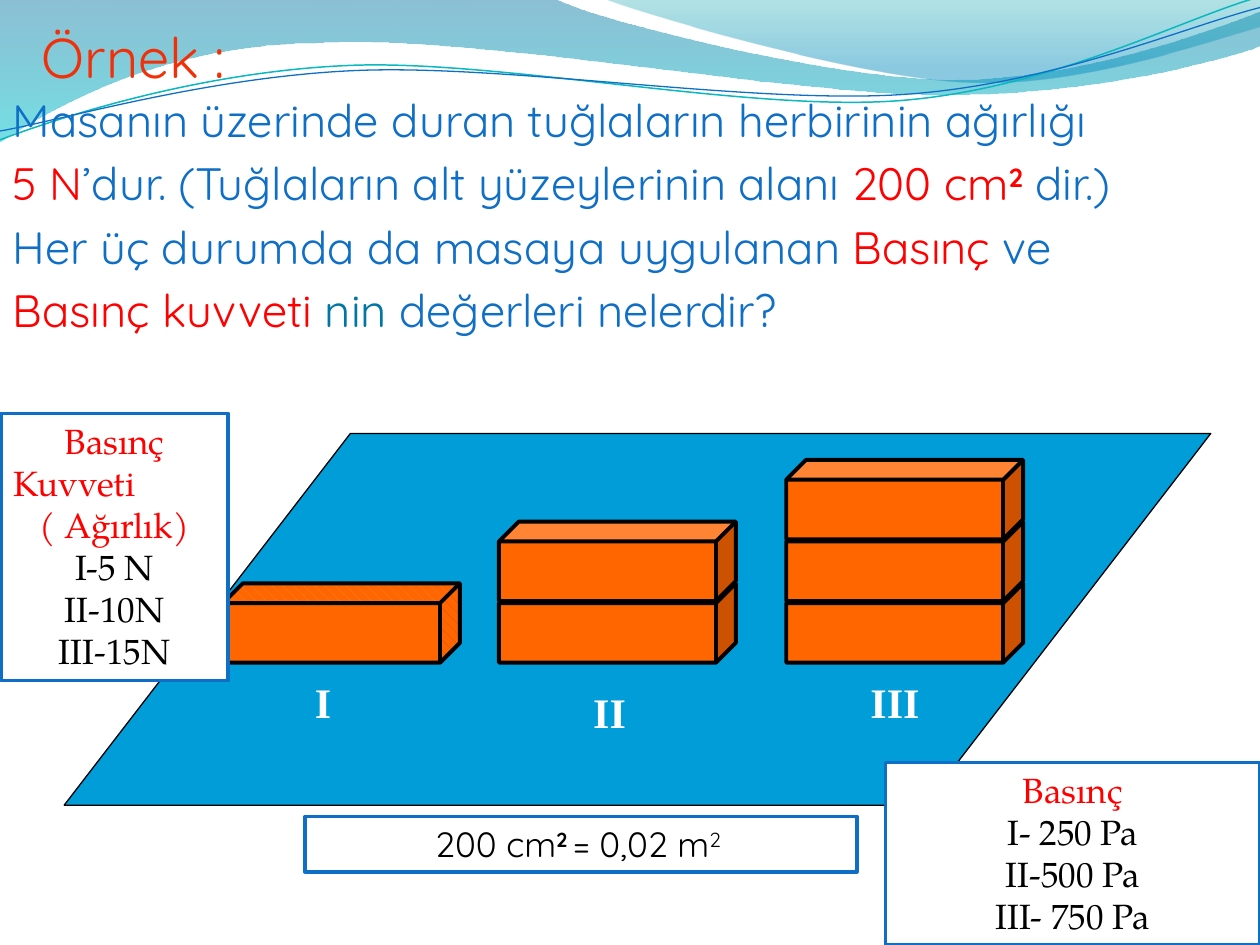
from lxml.etree import SubElement
from pptx import Presentation
from pptx.dml.color import RGBColor
from pptx.enum.dml import MSO_PATTERN
from pptx.enum.shapes import MSO_SHAPE
from pptx.enum.text import MSO_ANCHOR, MSO_AUTO_SIZE, PP_ALIGN
from pptx.oxml.ns import qn
from pptx.util import Inches, Pt

BLUE = RGBColor(0x0F, 0x6F, 0xC6)
TEAL = RGBColor(0x00, 0x76, 0xA3)
RED = RGBColor(0xFF, 0x00, 0x00)
TITLE_RED = RGBColor(0xF1, 0x30, 0x09)
TABLE_BLUE = RGBColor(0x00, 0x9D, 0xD9)
ORANGE = RGBColor(0xFF, 0x66, 0x00)
BLACK = RGBColor(0, 0, 0)
WHITE = RGBColor(0xFF, 0xFF, 0xFF)
AQUA = RGBColor(0x0A, 0xB8, 0xBF)
SANS, SERIF, ROMAN = "Quicksand", "TeX Gyre Pagella", "Times New Roman"

QUESTION = [
    [("Masanın üzerinde duran tuğlaların herbirinin ağırlığı", BLUE)],
    [("5 N", RED), ("’dur. (Tuğlaların alt yüzeylerinin alanı ", BLUE),
     ("200 cm", RED), ("2", RED, "bold super"), (" dir.)", BLUE)],
    [("Her üç durumda da masaya uygulanan ", BLUE), ("Basınç", RED), (" ve", BLUE)],
    [("Basınç kuvveti ", RED), ("nin ", TEAL), ("değerleri nelerdir?", BLUE)],
]
FORCES = [[("Basınç", RED)], [("Kuvveti", RED)], [("( Ağırlık)", RED)],
          [("I-5 N", BLACK)], [("II-10N", BLACK)], [("III-15N", BLACK)]]
PRESSURES = [[("Basınç", RED)], [("I- 250 Pa", BLACK)],
             [("II-500 Pa", BLACK)], [("III- 750 Pa", BLACK)]]
CONVERSION = [[("200 cm", BLACK), ("2 ", BLACK, "bold super"),
               ("= 0,02 m", BLACK), ("2 ", BLACK, "super")]]
BOXES = [
    ((0.01, 3.28, 1.8, 2.12), FORCES, SERIF),
    ((7.03, 6.05, 2.97, 1.45), PRESSURES, SERIF),
    ((2.42, 6.48, 4.38, 0.44), CONVERSION, SANS),
]
STACKS = [(6.24, 3), (1.77, 1), (3.96, 2)]
LABELS = [("I", 2.4, 5.32, 0.78), ("II", 4.61, 5.4, 0.78), ("III", 6.81, 5.32, 1.18)]

WAVES = [
    ([(0, -0.01), (4.4, -0.01),
      (4.76, 0.17, 6.64, 0.63, 7.58, 0.63), (8.53, 0.63, 9.58, 0.26, 10, 0.09),
      (10.01, 0.36), (9.83, 0.44, 8.7, 0.76, 7.46, 0.75),
      (6.22, 0.75, 3.82, 0.28, 2.57, 0.34), (1.29, 0.35, 0.46, 0.83, -0.01, 1.13)],
     [(0, RGBColor(0x00, 0x74, 0xA1), 45), (1, RGBColor(0x00, 0xC6, 0xCF), 55)]),
    ([(4.79, -0.01), (5.09, 0.11, 6.82, 0.62, 7.69, 0.65),
      (8.56, 0.69, 9.61, 0.32, 10, 0.21), (10, 0)],
     [(0, RGBColor(0x00, 0xA1, 0xA9), 30), (0.8, RGBColor(0x00, 0x8B, 0xBF), 45)]),
]
STRANDS = [
    ([(0, 1.11), (0.48, 0.93, 1.58, 0.57, 2.77, 0.52),
      (3.95, 0.47, 5.93, 0.89, 7.13, 0.8), (8.33, 0.71, 9.38, 0.15, 9.98, -0.02)],
     AQUA, 0.85),
    ([(0, 1.04), (0.47, 0.96, 1.64, 0.61, 2.83, 0.56),
      (4.03, 0.51, 5.97, 0.83, 7.17, 0.75), (8.36, 0.67, 9.41, 0.21, 10, 0.06)],
     BLUE, 0.75),
]


def add_outline(slide, outline, close):
    ends = [(Inches(part[-2]), Inches(part[-1])) for part in outline]
    builder = slide.shapes.build_freeform(*ends[0])
    builder.add_line_segments(ends[1:], close=close)
    shape = builder.convert_to_shape()
    shape.shadow.inherit = False
    segments = list(shape.element.iter(qn("a:lnTo")))
    for segment, part in zip(segments, outline[1:]):
        if len(part) == 6:
            curve = SubElement(segment.getparent(), qn("a:cubicBezTo"))
            for x, y in zip(part[::2], part[1::2]):
                point = SubElement(curve, qn("a:pt"))
                point.set("x", str(Inches(x) - shape.left))
                point.set("y", str(Inches(y) - shape.top))
            segment.getparent().replace(segment, curve)
    return shape


def add_wave(slide, outline, stops):
    shape = add_outline(slide, outline, True)
    shape.line.fill.background()
    shape.fill.gradient()
    shape.fill.gradient_angle = 270
    for stop, (position, color, _) in zip(shape.fill.gradient_stops, stops):
        stop.position = position
        stop.color.rgb = color
    for element, (_, _, opacity) in zip(shape.element.iter(qn("a:gs")), stops):
        SubElement(element[0], qn("a:alpha")).set("val", str(opacity * 1000))


def add_strand(slide, outline, color, width):
    shape = add_outline(slide, outline, False)
    shape.fill.background()
    shape.line.color.rgb = color
    shape.line.width = Pt(width)


def place(shape, box):
    shape.left, shape.top, shape.width, shape.height = map(Inches, box)


def add_block(slide, kind, box, fill, line, width):
    shape = slide.shapes.add_shape(kind, *map(Inches, box))
    shape.shadow.inherit = False
    shape.fill.solid()
    shape.fill.fore_color.rgb = fill
    shape.line.color.rgb = line
    shape.line.width = Pt(width)
    return shape


def write(frame, lines, font, size, align=PP_ALIGN.LEFT):
    frame.auto_size = MSO_AUTO_SIZE.NONE
    frame.word_wrap = True
    for index, line in enumerate(lines):
        paragraph = frame.add_paragraph() if index else frame.paragraphs[0]
        paragraph.alignment = align
        for text, color, *style in line:
            run = paragraph.add_run()
            run.text = text
            run.font.name = font
            run.font.size = Pt(size)
            run.font.color.rgb = color
            run.font.bold = "bold" in "".join(style)
            if "super" in "".join(style):
                run.font._element.set("baseline", "30000")


def add_heading(slide):
    title, body = slide.shapes.title, slide.placeholders[1]
    for placeholder in (body, title):
        slide.shapes.element.append(placeholder.element)
    place(title, (0.23, 0.13, 1.79, 0.63))
    write(title.text_frame, [[("Örnek :", TITLE_RED)]], SANS, 32)
    title.text_frame.word_wrap = False
    place(body, (0, 0.68, 10, 2.05))
    write(body.text_frame, QUESTION, SANS, 25.9)
    for paragraph in body.text_frame.paragraphs:
        paragraph.space_before = Pt(5.18)
        properties = paragraph._p.get_or_add_pPr()
        properties.set("marL", str(Inches(0.3)))
        properties.set("indent", str(-Inches(0.3)))
        SubElement(properties, qn("a:buNone"))


def add_bricks(slide):
    for left, count in STACKS:
        for level in range(count):
            brick = add_block(slide, MSO_SHAPE.CUBE,
                              (left, 4.63 - 0.49 * level, 1.88, 0.63), ORANGE, BLACK, 2.25)
            brick.adjustments[0] = 0.25
            if count == 1:
                brick.fill.patterned()
                brick.fill.pattern = MSO_PATTERN.DASHED_DOWNWARD_DIAGONAL
                brick.fill.fore_color.rgb = ORANGE
                brick.fill.back_color.rgb = ORANGE


def main():
    presentation = Presentation()
    presentation.slide_width, presentation.slide_height = Inches(10), Inches(7.5)
    slide = presentation.slides.add_slide(presentation.slide_layouts[1])
    for outline, stops in WAVES:
        add_wave(slide, outline, stops)
    for outline, color, width in STRANDS:
        add_strand(slide, outline, color, width)
    add_heading(slide)
    table = add_block(slide, MSO_SHAPE.PARALLELOGRAM, (0.51, 3.44, 9.1, 2.95),
                      TABLE_BLUE, BLACK, 0.75)
    table.adjustments[0] = 0.77
    add_bricks(slide)
    for text, left, top, width in LABELS:
        label = slide.shapes.add_textbox(*map(Inches, (left, top, width, 0.5)))
        write(label.text_frame, [[(text, WHITE, "bold")]], ROMAN, 24)
    for box, lines, font in BOXES:
        shape = add_block(slide, MSO_SHAPE.RECTANGLE, box, WHITE, BLUE, 2)
        write(shape.text_frame, lines, font, 20, PP_ALIGN.CENTER)
        shape.text_frame.vertical_anchor = MSO_ANCHOR.TOP
        if lines is FORCES:
            shape.text_frame.paragraphs[1].alignment = PP_ALIGN.LEFT
    presentation.save("out.pptx")


if __name__ == "__main__":
    main()
